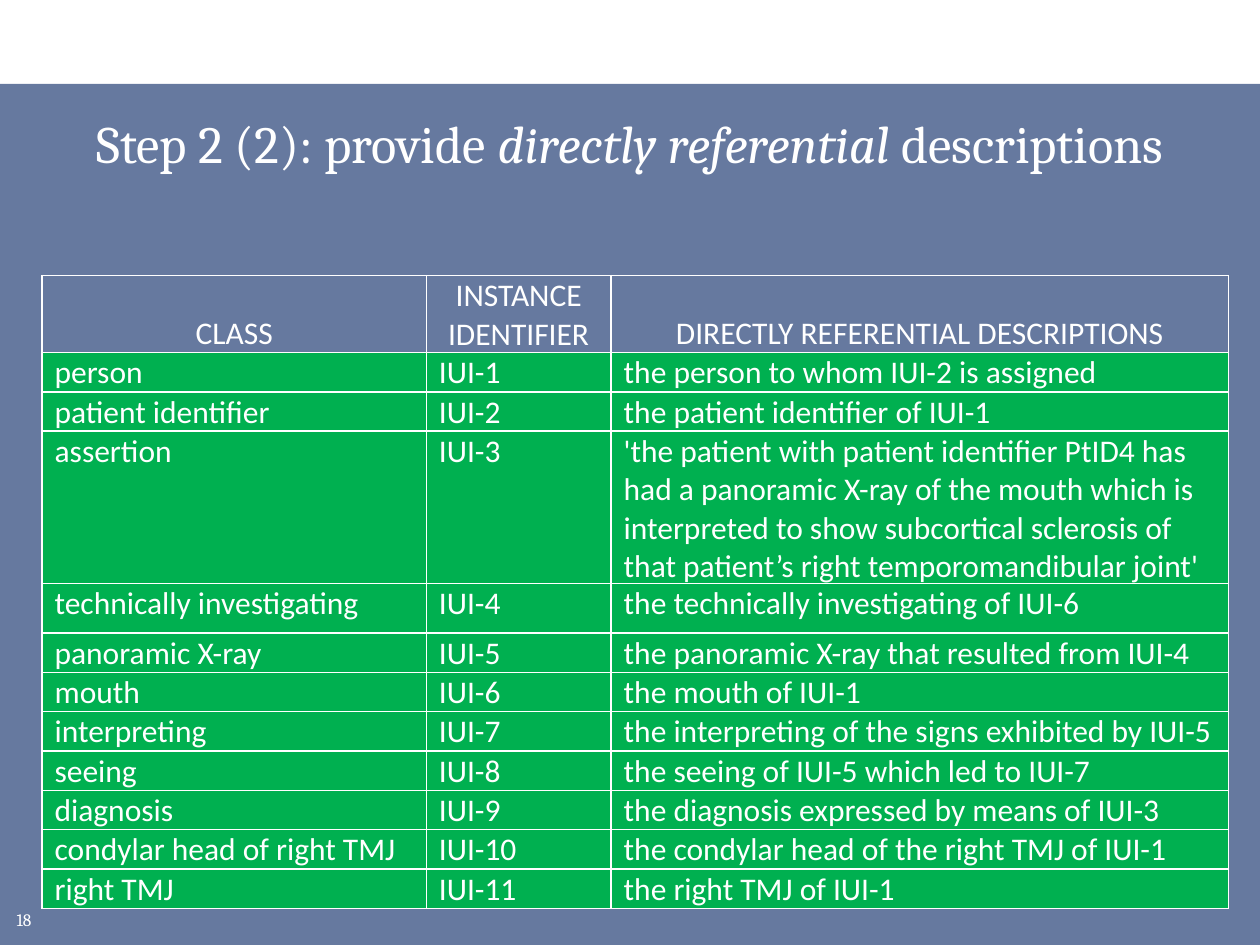
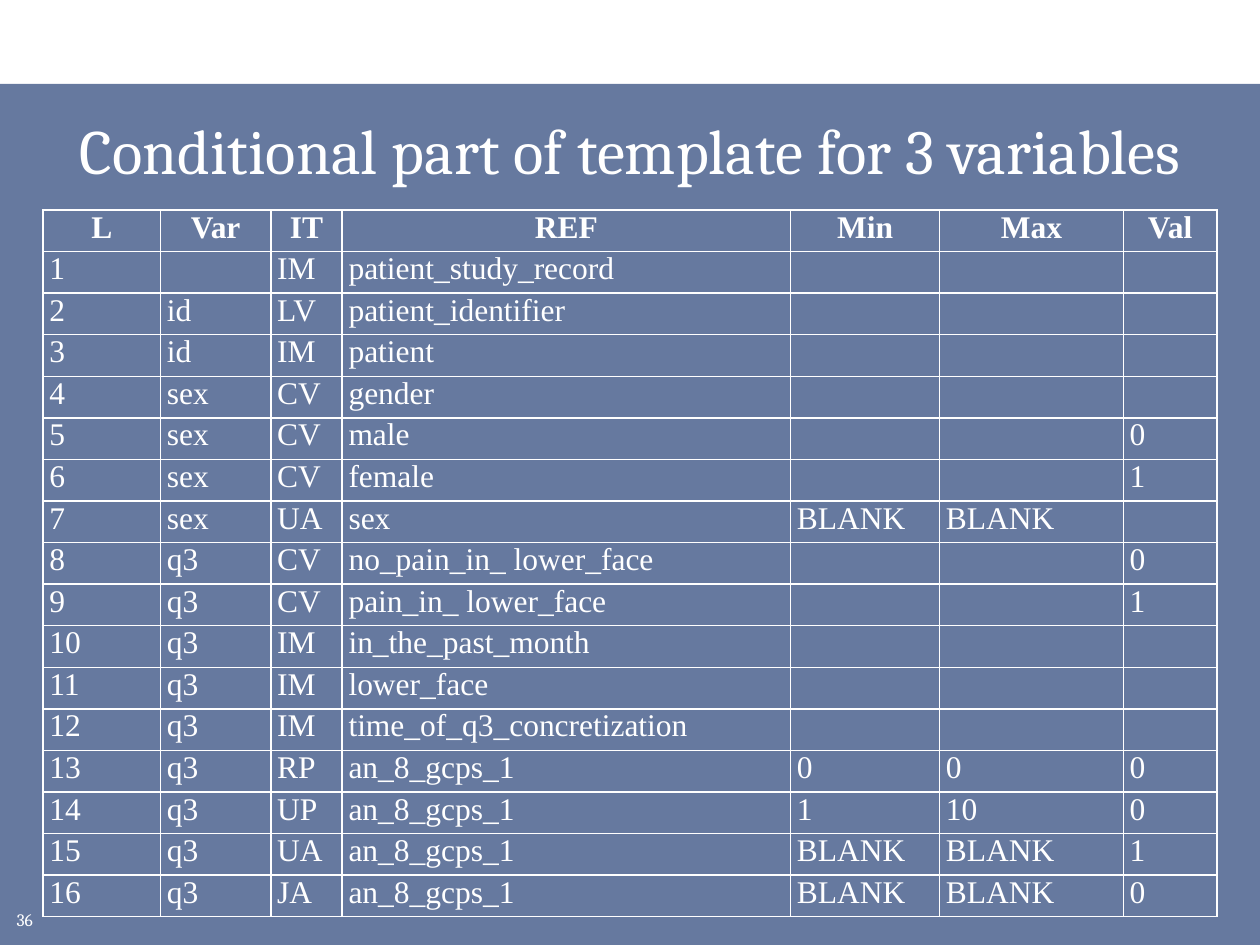
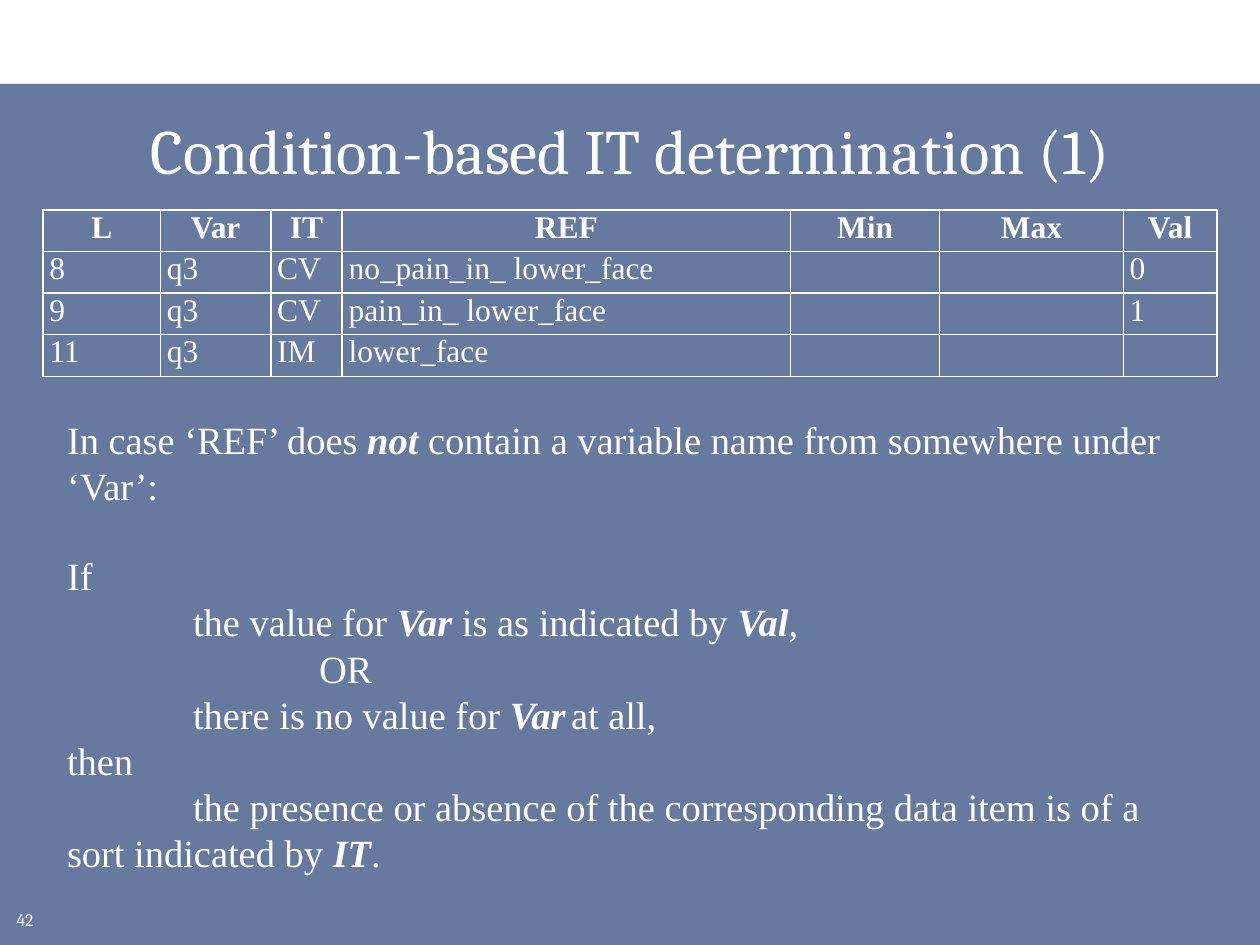
from lxml import etree
from pptx import Presentation
from pptx.dml.color import RGBColor
from pptx.enum.shapes import MSO_SHAPE
from pptx.enum.text import MSO_ANCHOR, PP_ALIGN
from pptx.oxml.ns import qn
from pptx.util import Inches, Pt

RECTANGLE = MSO_SHAPE.RECTANGLE
TOP, BOTTOM = MSO_ANCHOR.TOP, MSO_ANCHOR.BOTTOM
LEFT, CENTER = PP_ALIGN.LEFT, PP_ALIGN.CENTER

COLORS = {"white": "FFFFFF", "navy": "002060", "green": "00B050"}
BAND_OPACITY = 60
UNIT = Inches(1 / 12)  # side of one square of the grid
COLUMNS, ROWS = 120, 90
BAND_TOP = 8

HEADING = {"name": "Cambria", "size": Pt(36)}
SMALL_HEADING = {"name": "Cambria", "size": Pt(30)}
FOOTER = {"name": "Cambria", "size": Pt(10)}
BODY = {"name": "Times New Roman", "size": Pt(22)}
ITALIC = {"italic": True}
BOLD_ITALIC = {"bold": True, "italic": True}

DESCRIPTION_TABLE = {
    "font": {"name": "Calibri", "size": Pt(18)},
    "header_font": {},
    "header_anchor": BOTTOM,
    "margins": (0.1, 0.01),
    "fill": "green",
    "widths": (36.6, 17.6, 58.8),
}
TEMPLATE_TABLE = {
    "font": {"name": "Times New Roman", "size": Pt(18)},
    "header_font": {"bold": True},
    "header_anchor": TOP,
    "margins": (0.05, 0),
    "fill": None,
    "widths": (11.2, 10.5, 6.8, 42.7, 14.2, 17.5, 8.9),
}
TEMPLATE_PLACE = (4.1, 20)
TEMPLATE_ROW = 3.96

DESCRIPTION_HEADER = ("CLASS", "INSTANCE IDENTIFIER", "DIRECTLY REFERENTIAL DESCRIPTIONS")
DESCRIPTIONS = [
    ("person", "the person to whom IUI-2 is assigned"),
    ("patient identifier", "the patient identifier of IUI-1"),
    ("assertion", "'the patient with patient identifier PtID4 has had a panoramic X-ray "
                  "of the mouth which is interpreted to show subcortical sclerosis of "
                  "that patient’s right temporomandibular joint'"),
    ("technically investigating", "the technically investigating of IUI-6"),
    ("panoramic X-ray", "the panoramic X-ray that resulted from IUI-4"),
    ("mouth", "the mouth of IUI-1"),
    ("interpreting", "the interpreting of the signs exhibited by IUI-5"),
    ("seeing", "the seeing of IUI-5 which led to IUI-7"),
    ("diagnosis", "the diagnosis expressed by means of IUI-3"),
    ("condylar head of right TMJ", "the condylar head of the right TMJ of IUI-1"),
    ("right TMJ", "the right TMJ of IUI-1"),
]
DESCRIPTION_HEIGHTS = [7.3, 3.75, 3.75, 14.5, 4.7] + [3.75] * 7

TEMPLATE_HEADER = ("L", "Var", "IT", "REF", "Min", "Max", "Val")
CONDITIONS = [
    ("", "IM", "patient_study_record", "", "", ""),
    ("id", "LV", "patient_identifier", "", "", ""),
    ("id", "IM", "patient", "", "", ""),
    ("sex", "CV", "gender", "", "", ""),
    ("sex", "CV", "male", "", "", "0"),
    ("sex", "CV", "female", "", "", "1"),
    ("sex", "UA", "sex", "BLANK", "BLANK", ""),
    ("q3", "CV", "no_pain_in_ lower_face", "", "", "0"),
    ("q3", "CV", "pain_in_ lower_face", "", "", "1"),
    ("q3", "IM", "in_the_past_month", "", "", ""),
    ("q3", "IM", "lower_face", "", "", ""),
    ("q3", "IM", "time_of_q3_concretization", "", "", ""),
    ("q3", "RP", "an_8_gcps_1", "0", "0", "0"),
    ("q3", "UP", "an_8_gcps_1", "1", "10", "0"),
    ("q3", "UA", "an_8_gcps_1", "BLANK", "BLANK", "1"),
    ("q3", "JA", "an_8_gcps_1", "BLANK", "BLANK", "0"),
]
TEMPLATE_ROWS = [(str(line), *values) for line, values in enumerate(CONDITIONS, 1)]
SHOWN_LINES = ("8", "9", "11")

# Each rule line: text, first-line indent in inches, space before in points
RULE = [
    ("In case ‘REF’ does *not* contain a variable name from somewhere under ‘Var’:", 0, 0),
    ("If", 0, 25.3),
    ("the value for *Var* is as indicated by *Val*,", 1, 0),
    ("OR", 2, 0),
    ("there is no value for *Var*\tat all,", 1, 0),
    ("then", 0, 0),
    ("the presence or absence of the corresponding data item is of a sort "
     "indicated by *IT*.", 1, 0),
]


def grid(*lengths):
    return [round(length * UNIT) for length in lengths]


def color(name):
    return RGBColor.from_string(COLORS[name])


class SlideBuilder:
    def __init__(self):
        self.deck = Presentation()
        self.deck.slide_width, self.deck.slide_height = grid(COLUMNS, ROWS)
        self.page = None

    def new_page(self, number):
        self.page = self.deck.slides.add_slide(self.deck.slide_layouts[6])
        self.band()
        self.text([(str(number), 0, 0)], (0.4, 86, 4.7, 3), FOOTER)

    def band(self):
        place = grid(0, BAND_TOP, COLUMNS, ROWS - BAND_TOP)
        band = self.page.shapes.add_shape(RECTANGLE, *place)
        band.shadow.inherit = False
        band.line.fill.background()
        band.fill.solid()
        band.fill.fore_color.rgb = color("navy")
        tint = band.fill._xPr.find(".//" + qn("a:srgbClr"))
        etree.SubElement(tint, qn("a:alpha"), val=str(BAND_OPACITY * 1000))

    def title(self, words, font=HEADING, margin=3):
        place = (margin, 10, COLUMNS - 2 * margin, 10)
        self.text([(words, 0, 0)], place, font, ITALIC, CENTER)

    def text(self, lines, place, font, emphasis=BOLD_ITALIC, align=LEFT):
        frame = self.page.shapes.add_textbox(*grid(*place)).text_frame
        frame.word_wrap = True
        for index, (words, indent, space) in enumerate(lines):
            para = frame.add_paragraph() if index else frame.paragraphs[0]
            para.alignment = align
            para.space_before = Pt(space)
            properties = para._p.get_or_add_pPr()
            properties.set("marL", "0")
            properties.set("indent", str(Inches(indent)))
            self.spans(para, words, font, emphasis)

    def spans(self, para, words, font, emphasis):
        """Add runs, with the emphasis on words between asterisks."""
        for index, part in enumerate(words.split("*")):
            if part:
                span = para.add_run()
                span.text = part
                span.font.color.rgb = color("white")
                for key, value in {**font, **(emphasis if index % 2 else {})}.items():
                    setattr(span.font, key, value)

    def table(self, rows, place, heights, style):
        widths = style["widths"]
        size = grid(*place, sum(widths), sum(heights))
        table = self.page.shapes.add_table(len(rows), len(widths), *size).table
        table.first_row = table.horz_banding = False
        for column, width in zip(table.columns, grid(*widths)):
            column.width = width
        for row, height in zip(table.rows, grid(*heights)):
            row.height = height
        for row_index, values in enumerate(rows):
            for column_index, words in enumerate(values):
                cell = table.cell(row_index, column_index)
                self.cell(cell, words, style, row_index == 0)

    def cell(self, cell, words, style, is_header):
        side, top = style["margins"]
        cell_format = {
            "margin_left": Inches(side),
            "margin_right": Inches(side),
            "margin_top": Inches(top),
            "margin_bottom": 0,
            "vertical_anchor": style["header_anchor"] if is_header else TOP,
        }
        for key, value in cell_format.items():
            setattr(cell, key, value)
        self.borders(cell)
        if style["fill"] and not is_header:
            cell.fill.solid()
            cell.fill.fore_color.rgb = color(style["fill"])
        else:
            cell.fill.background()
        para = cell.text_frame.paragraphs[0]
        para.alignment = CENTER if is_header else LEFT
        font = {**style["font"], **(style["header_font"] if is_header else {})}
        self.spans(para, words, font, {})

    def borders(self, cell):
        properties = cell._tc.get_or_add_tcPr()
        for side in ("lnL", "lnR", "lnT", "lnB"):
            line = etree.SubElement(properties, qn("a:" + side), w=str(Pt(1)))
            fill = etree.SubElement(line, qn("a:solidFill"))
            etree.SubElement(fill, qn("a:srgbClr"), val=COLORS["white"])

    def template_table(self, rows):
        rows = [TEMPLATE_HEADER, *rows]
        self.table(rows, TEMPLATE_PLACE, [TEMPLATE_ROW] * len(rows), TEMPLATE_TABLE)


def main():
    builder = SlideBuilder()

    builder.new_page(18)
    builder.title("Step 2 (2): provide *directly referential *descriptions", SMALL_HEADING)
    rows = [(kind, f"IUI-{number}", description)
            for number, (kind, description) in enumerate(DESCRIPTIONS, 1)]
    builder.table([DESCRIPTION_HEADER, *rows], (4, 26.25), DESCRIPTION_HEIGHTS,
                  DESCRIPTION_TABLE)

    builder.new_page(36)
    builder.title("Conditional part of template for 3 variables", margin=0)
    builder.template_table(TEMPLATE_ROWS)

    builder.new_page(42)
    builder.title("Condition-based IT determination (1)")
    builder.text(RULE, (5.2, 39, 107.9, 45.6), BODY)
    builder.template_table([row for row in TEMPLATE_ROWS if row[0] in SHOWN_LINES])

    builder.deck.save("out.pptx")


if __name__ == "__main__":
    main()
